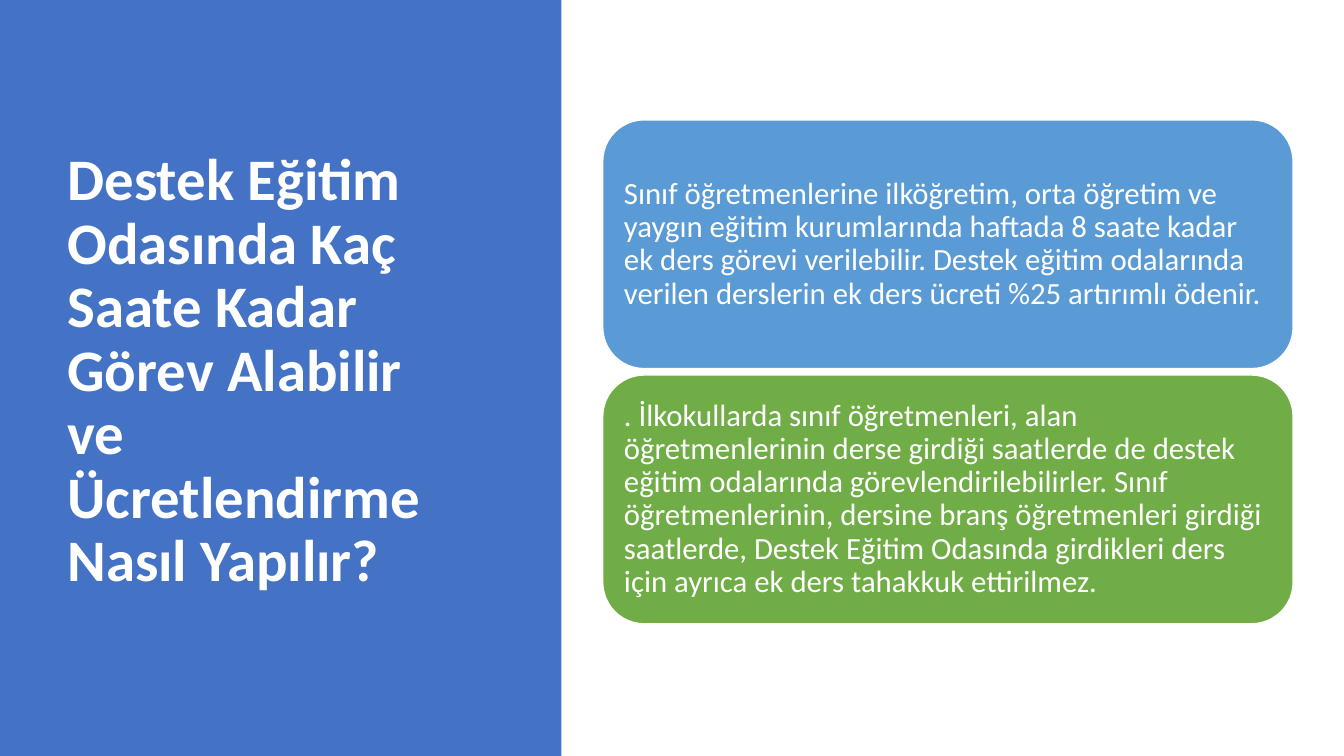
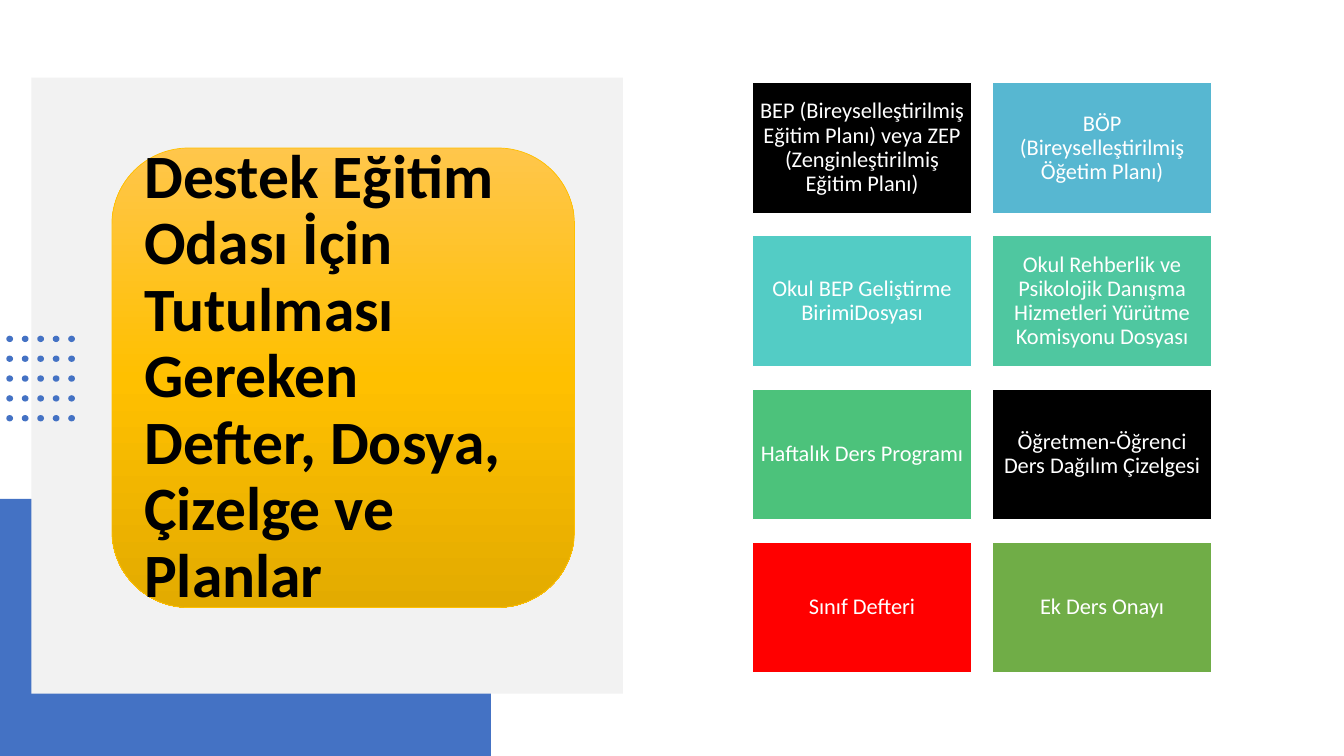
import copy
import itertools
from dataclasses import dataclass

import pptx
import pptx.dml.color
import pptx.enum.shapes
import pptx.enum.text
import pptx.oxml.ns
import pptx.shapes.autoshape
import pptx.slide
import pptx.util

Cm = pptx.util.Cm
Kind = pptx.enum.shapes.MSO_SHAPE
Align = pptx.enum.text.PP_ALIGN

FONT = "Calibri"
COLORS = {
    "blue": "4472C4",
    "sky": "5B9BD5",
    "green": "70AD47",
    "grey": "F2F2F2",
    "gold": "FFC000",
    "gold light": "FFC64B",
    "gold dark": "E3AB00",
    "cyan": "57B7D1",
    "turquoise": "53CCC5",
    "mint": "4FC7A0",
    "emerald": "4CC27B",
    "red": "FF0000",
    "black": "000000",
    "white": "FFFFFF",
}


@dataclass(frozen=True)
class Area:
    """A rectangle on the slide, in centimetres."""
    left: float
    top: float
    width: float
    height: float

    def moved(self, across: float, down: float) -> "Area":
        return Area(self.left + across, self.top + down, self.width, self.height)

    def lengths(self) -> tuple:
        return Cm(self.left), Cm(self.top), Cm(self.width), Cm(self.height)


@dataclass(frozen=True)
class TextStyle:
    size: float
    color: str = "white"
    bold: bool = False
    align: Align = Align.LEFT
    inset_x: float = 0.25
    inset_y: float = 0.13


@dataclass(frozen=True)
class Item:
    text: str
    fill: str


CARD_STYLE = TextStyle(22, inset_x=0.23, inset_y=0.23)
TILE_STYLE = TextStyle(16, align=Align.CENTER, inset_x=0.17, inset_y=0.17)

CARDS = [
    Item("Sınıf öğretmenlerine ilköğretim, orta öğretim ve yaygın eğitim "
         "kurumlarında haftada 8 saate kadar ek ders görevi verilebilir. "
         "Destek eğitim odalarında verilen derslerin ek ders ücreti %25 "
         "artırımlı ödenir.", "sky"),
    Item(". İlkokullarda sınıf öğretmenleri, alan öğretmenlerinin derse girdiği "
         "saatlerde de destek eğitim odalarında görevlendirilebilirler. Sınıf "
         "öğretmenlerinin, dersine branş öğretmenleri girdiği saatlerde, Destek "
         "Eğitim Odasında girdikleri ders için ayrıca ek ders tahakkuk "
         "ettirilmez.", "green"),
]

TILES = [
    Item("BEP (Bireyselleştirilmiş Eğitim Planı) veya ZEP "
         "(Zenginleştirilmiş Eğitim Planı)", "black"),
    Item("BÖP (Bireyselleştirilmiş Öğetim Planı)", "cyan"),
    Item("Okul BEP Geliştirme BirimiDosyası", "turquoise"),
    Item("Okul Rehberlik ve Psikolojik Danışma Hizmetleri Yürütme "
         "Komisyonu Dosyası", "mint"),
    Item("Haftalık Ders Programı", "emerald"),
    Item("Öğretmen-Öğrenci Ders Dağılım Çizelgesi", "black"),
    Item("Sınıf Defteri", "red"),
    Item("Ek Ders Onayı", "green"),
]


def rgb(name: str) -> pptx.dml.color.RGBColor:
    return pptx.dml.color.RGBColor.from_string(COLORS[name])


def add_block(parent: pptx.slide.Slide, kind: Kind, area: Area, fill: str,
              line: str = "", line_width: float = 1) -> pptx.shapes.autoshape.Shape:
    """Add a flat shape to a slide or a group."""
    block = parent.shapes.add_shape(kind, *area.lengths())
    block.shadow.inherit = False
    block.fill.solid()
    block.fill.fore_color.rgb = rgb(fill)
    if line:
        block.line.color.rgb = rgb(line)
        block.line.width = pptx.util.Pt(line_width)
    else:
        block.line.fill.background()
    return block


def write(box: pptx.shapes.autoshape.Shape, text: str, style: TextStyle) -> None:
    """Fill a box with one vertically centred paragraph."""
    frame = box.text_frame
    frame.word_wrap = True
    frame.vertical_anchor = pptx.enum.text.MSO_ANCHOR.MIDDLE
    frame.margin_left = frame.margin_right = Cm(style.inset_x)
    frame.margin_top = frame.margin_bottom = Cm(style.inset_y)
    para = frame.paragraphs[0]
    para.alignment = style.align
    para.line_spacing = 0.9
    span = para.add_run()
    span.text = text
    span.font.name = FONT
    span.font.size = pptx.util.Pt(style.size)
    span.font.bold = style.bold
    span.font.color.rgb = rgb(style.color)


def write_title(box: pptx.shapes.autoshape.Shape, text: str, size: float,
                color: str) -> None:
    write(box, text, TextStyle(size, color, bold=True))


def shade_down(block: pptx.shapes.autoshape.Shape, names: list[str]) -> None:
    """Fill a block with evenly spaced colours from top to bottom."""
    block.fill.gradient()
    block.fill.gradient_angle = 270
    stop_list = block._element.spPr.find(
        ".//" + pptx.oxml.ns.qn("a:gsLst"))
    while len(stop_list) < len(names):
        stop_list.append(copy.deepcopy(stop_list[0]))
    for index, (stop, name) in enumerate(zip(block.fill.gradient_stops, names)):
        stop.color.rgb = rgb(name)
        stop.position = index / (len(names) - 1)


def add_grid(page: pptx.slide.Slide, kind: Kind, items: list[Item], first: Area,
             columns: int, gap_x: float, gap_y: float, style: TextStyle) -> None:
    """Lay out labelled blocks row by row."""
    for index, item in enumerate(items):
        row, column = divmod(index, columns)
        area = first.moved(column * (first.width + gap_x),
                           row * (first.height + gap_y))
        write(add_block(page, kind, area, item.fill, "white"), item.text, style)


def add_dots(page: pptx.slide.Slide, first: Area, count: int,
             step_x: float, step_y: float) -> None:
    """Add a square field of dots as one group."""
    group = page.shapes.add_group_shape()
    for column, row in itertools.product(range(count), repeat=2):
        add_block(group, Kind.OVAL, first.moved(column * step_x, row * step_y), "blue")


def build_hours_page(page: pptx.slide.Slide) -> None:
    # Title panel
    add_block(page, Kind.RECTANGLE, Area(0, 0, 14.15, 19.05), "blue")
    title = page.shapes.add_textbox(*Area(1.45, 1.73, 10.57, 15.29).lengths())
    write_title(title, "Destek Eğitim Odasında Kaç Saate Kadar Görev Alabilir ve "
                "Ücretlendirme Nasıl Yapılır?", 42, "white")
    # Answer cards
    add_grid(page, Kind.ROUNDED_RECTANGLE, CARDS, Area(15.19, 3.02, 17.4, 6.27),
             1, 0, 0.16, CARD_STYLE)


def build_documents_page(page: pptx.slide.Slide) -> None:
    # Backdrop
    add_block(page, Kind.RECTANGLE, Area(0, 12.57, 12.37, 6.48), "blue")
    add_block(page, Kind.RECTANGLE, Area(0.79, 1.96, 14.91, 15.52), "grey")
    # Title plate
    plate = add_block(page, Kind.ROUNDED_RECTANGLE, Area(2.82, 3.73, 11.66, 11.58),
                      "gold", "gold", 0.5)
    shade_down(plate, ["gold light", "gold", "gold dark"])
    write_title(plate, "Destek Eğitim Odası İçin Tutulması Gereken Defter, Dosya, "
                "Çizelge ve Planlar", 44, "black")
    # Dots and document tiles
    add_dots(page, Area(0.16, 8.46, 0.17, 0.16), 5, 0.39, 0.5)
    add_grid(page, Kind.RECTANGLE, TILES, Area(18.97, 2.08, 5.51, 3.3),
             2, 0.54, 0.56, TILE_STYLE)


def main() -> None:
    deck = pptx.Presentation()
    deck.slide_width, deck.slide_height = Cm(33.87), Cm(19.05)
    blank = deck.slide_layouts[6]
    for build in (build_hours_page, build_documents_page):
        build(deck.slides.add_slide(blank))
    deck.save("out.pptx")


if __name__ == "__main__":
    main()
